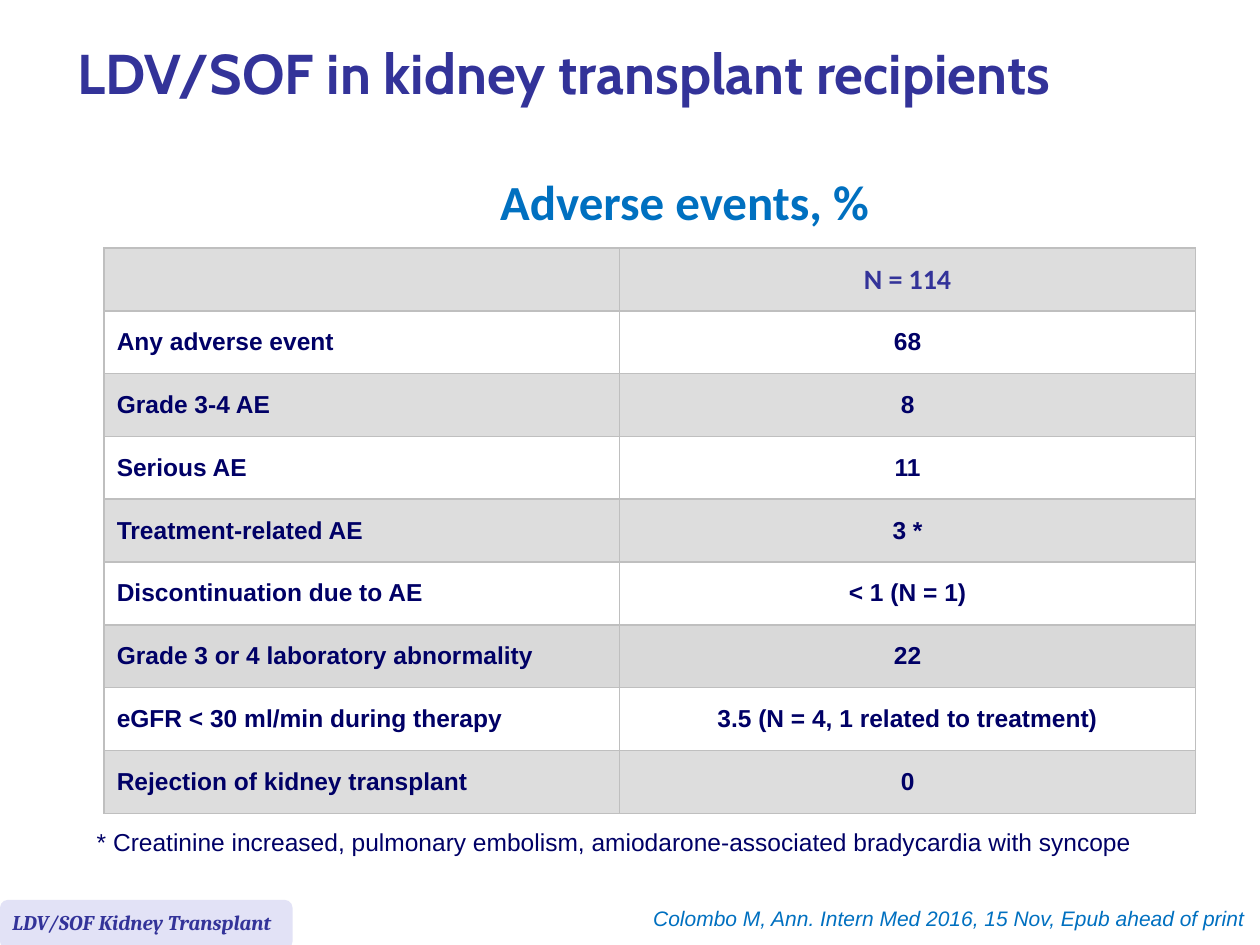
from lxml import etree
from pptx import Presentation
from pptx.dml.color import RGBColor
from pptx.enum import shapes, text
from pptx.oxml import ns
from pptx.util import Cm, Pt

INDIGO = RGBColor(0x33, 0x33, 0x99)
NAVY = RGBColor(0x00, 0x00, 0x66)
BLUE = RGBColor(0x00, 0x70, 0xC0)
LAVENDER = RGBColor(0xE2, 0xE2, 0xF6)
GREY = RGBColor(0xDD, 0xDD, 0xDD)
LAB_GREY = RGBColor(0xD9, 0xD9, 0xD9)
WHITE = RGBColor(0xFF, 0xFF, 0xFF)
BORDER = RGBColor(0xBF, 0xBF, 0xBF)

LEFT, CENTER, RIGHT = text.PP_ALIGN.LEFT, text.PP_ALIGN.CENTER, text.PP_ALIGN.RIGHT

ADVERSE_EVENTS = [
    ("", "N = 114"),
    ("Any adverse event", "68"),
    ("Grade 3-4 AE", "8"),
    ("Serious AE", "11"),
    ("Treatment-related AE", "3 *"),
    ("Discontinuation due to AE", "< 1 (N = 1)"),
    ("Grade 3 or 4 laboratory abnormality", "22"),
    ("eGFR < 30 ml/min during therapy", "3.5 (N = 4, 1 related to treatment)"),
    ("Rejection of kidney transplant", "0"),
]
LAB_ROW = 6


def write(paragraph, wording, font, size, color, bold=False, italic=False, align=LEFT):
    """Add one formatted run to a paragraph."""
    paragraph.alignment = align
    run = paragraph.add_run()
    run.text = wording
    run.font.name, run.font.size = font, Pt(size)
    run.font.bold, run.font.italic = bold, italic
    run.font.color.rgb = color


def place(placeholder, box, anchor):
    """Move a placeholder to a box and return its first paragraph."""
    placeholder.left, placeholder.top, placeholder.width, placeholder.height = box
    frame = placeholder.text_frame
    frame.auto_size = text.MSO_AUTO_SIZE.NONE
    frame.word_wrap = True
    frame.vertical_anchor = anchor
    return frame.paragraphs[0]


def add_headings(slide, title_box, subtitle_box):
    """Fill the title and the heading above the table."""
    title = place(slide.shapes.title, title_box, text.MSO_ANCHOR.MIDDLE)
    title.line_spacing = 0.85
    write(title, "LDV/SOF in kidney transplant recipients", "Cabin", 32, INDIGO, bold=True)

    subtitle = place(slide.placeholders[1], subtitle_box, text.MSO_ANCHOR.TOP)
    properties = subtitle._p.get_or_add_pPr()
    properties.set("marL", "0")
    properties.set("indent", "0")
    etree.SubElement(properties, ns.qn("a:buNone"))
    subtitle.space_before = Pt(0)
    write(subtitle, "Adverse events, %", "Calibri", 28, BLUE, bold=True, align=CENTER)


def add_borders(cell):
    """Draw a thin line on all four sides of a cell."""
    properties = cell._tc.get_or_add_tcPr()
    for side in ("lnL", "lnR", "lnT", "lnB"):
        line = etree.SubElement(properties, ns.qn(f"a:{side}"), w=str(Pt(1)))
        fill = etree.SubElement(line, ns.qn("a:solidFill"))
        etree.SubElement(fill, ns.qn("a:srgbClr"), val=str(BORDER))


def add_event_table(slide, left, top, width, height):
    """Add the banded table of adverse events."""
    table = slide.shapes.add_table(len(ADVERSE_EVENTS), 2, left, top, width, height).table
    event_width = Cm(10.39)
    table.columns[0].width, table.columns[1].width = event_width, width - event_width
    for row, entries in enumerate(ADVERSE_EVENTS):
        band = LAB_GREY if row == LAB_ROW else WHITE if row % 2 else GREY
        font, size, color = ("Arial", 14, NAVY) if row else ("Calibri", 16, INDIGO)
        for column, entry in enumerate(entries):
            cell = table.cell(row, column)
            add_borders(cell)
            cell.fill.solid()
            cell.fill.fore_color.rgb = band
            cell.vertical_anchor = text.MSO_ANCHOR.MIDDLE
            if entry:
                write(cell.text_frame.paragraphs[0], entry, font, size, color,
                      bold=True, align=CENTER if column else LEFT)


def add_caption(parent, box, wording, font, size, color, wrap=False, **style):
    """Add a one-line text box to a slide's or group's shapes."""
    frame = parent.add_textbox(*box).text_frame
    frame.word_wrap = wrap
    write(frame.paragraphs[0], wording, font, size, color, **style)


def add_study_tag(slide, left, top, width, height):
    """Add the study name on its rounded tag."""
    tag = slide.shapes.add_group_shape().shapes
    plate = tag.add_shape(shapes.MSO_SHAPE.ROUNDED_RECTANGLE, left, top, width, height)
    plate.shadow.inherit = False
    plate.fill.solid()
    plate.fill.fore_color.rgb = LAVENDER
    plate.line.fill.background()
    add_caption(tag, (left, top + Cm(0.07), width + Cm(0.2), Cm(0.76)),
                "LDV/SOF Kidney Transplant", "Cambria", 12, INDIGO,
                wrap=True, bold=True, italic=True)


def main():
    """Build and save the slide."""
    deck = Presentation()
    deck.slide_width, deck.slide_height = Cm(25.4), Cm(19.05)
    slide = deck.slides.add_slide(deck.slide_layouts[1])
    add_headings(slide,
                 (Cm(1.3), Cm(0.2), Cm(23.2), Cm(2.72)),
                 (Cm(9.7), Cm(3.33), Cm(8.2), Cm(1.6)))
    add_caption(slide.shapes, (Cm(1.7), Cm(16.54), Cm(21.46), Cm(0.86)),
                "* Creatinine increased, pulmonary embolism, "
                "amiodarone-associated bradycardia with syncope",
                "Arial", 14, NAVY)
    add_study_tag(slide, Cm(0), Cm(18.14), Cm(5.9), Cm(1))
    add_event_table(slide, Cm(2.1), Cm(5), Cm(22), Cm(11.4))
    add_caption(slide.shapes, (Cm(12.8), Cm(18.14), Cm(12.55), Cm(0.76)),
                "Colombo M, Ann. Intern Med 2016, 15 Nov, Epub ahead of print",
                "Arial", 12, BLUE, italic=True, align=RIGHT)
    deck.save("out.pptx")


if __name__ == "__main__":
    main()
